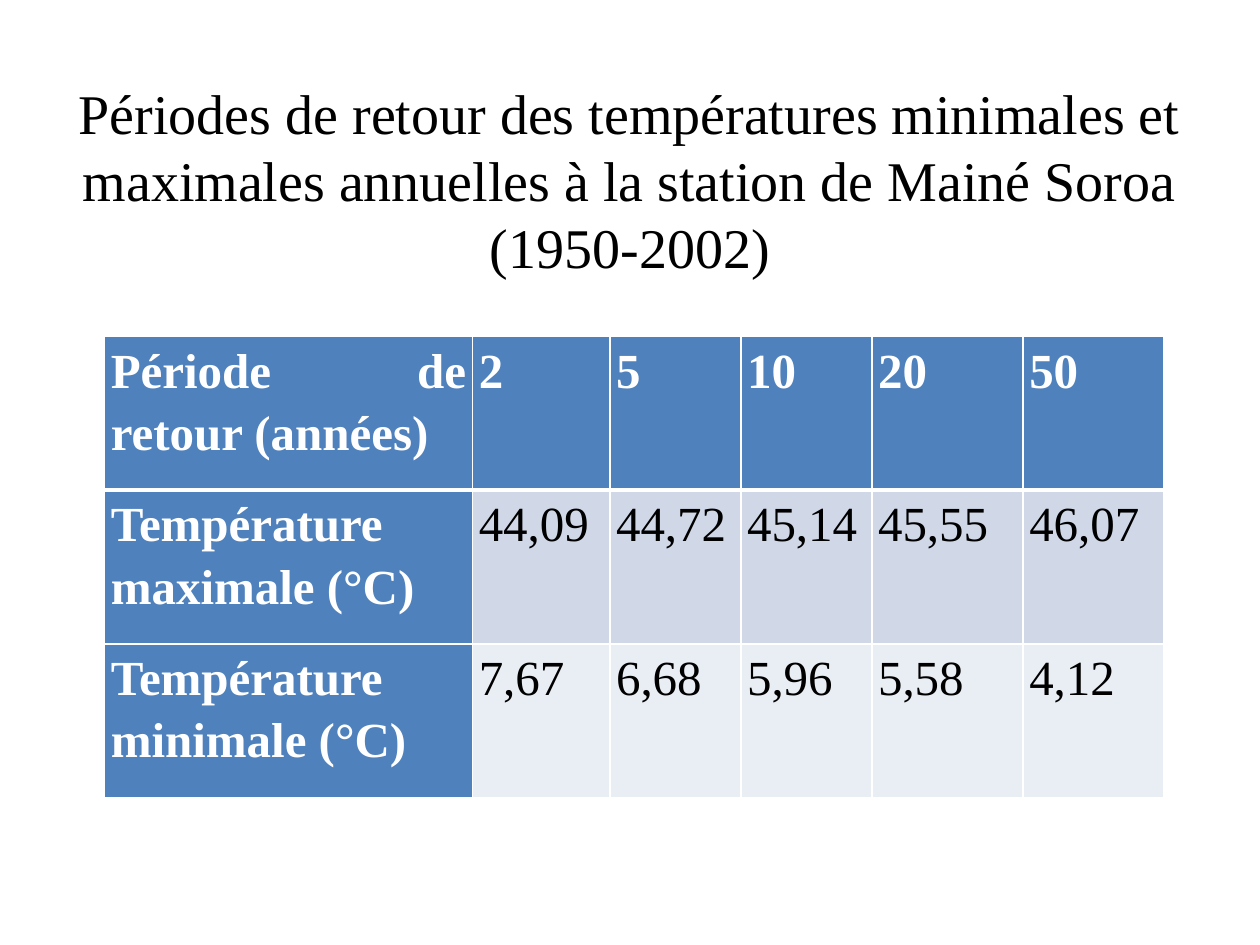
from dataclasses import dataclass

from lxml import etree
from pptx import Presentation
from pptx import util as u
from pptx.dml.color import RGBColor
from pptx.enum import text
from pptx.oxml.ns import qn


@dataclass(frozen=True)
class Theme:
    font: str = "Times New Roman"
    dark: str = "000000"
    light: str = "FFFFFF"
    head: str = "4F81BD"
    bands: tuple = ("D0D8E8", "E9EDF4")
    title: int = 32
    body: int = 28
    thin: int = 1
    thick: int = 3


class Deck:
    def __init__(self, theme):
        self.theme = theme
        self.prs = Presentation()
        self.prs.slide_width = u.Inches(10)
        self.prs.slide_height = u.Inches(7.5)
        self.slide = self.prs.slides.add_slide(self.prs.slide_layouts[5])

    def style(self, para, size, color, bold=False):
        for run in para.runs:
            font = run.font
            font.name = self.theme.font
            font.size = u.Pt(size)
            font.bold = bold
            font.color.rgb = RGBColor.from_string(color)

    def title(self, words, left, top, width, height):
        box = self.slide.shapes.title
        box.left, box.top = u.Inches(left), u.Inches(top)
        box.width, box.height = u.Inches(width), u.Inches(height)
        frame = box.text_frame
        frame.text = words
        frame.word_wrap = True
        frame.auto_size = text.MSO_AUTO_SIZE.NONE
        frame.vertical_anchor = text.MSO_ANCHOR.MIDDLE
        para = frame.paragraphs[0]
        para.alignment = text.PP_ALIGN.CENTER
        self.style(para, self.theme.title, self.theme.dark)

    def border(self, cell, side, width):
        props = cell._tc.get_or_add_tcPr()
        line = etree.SubElement(props, qn(f"a:ln{side}"), w=str(u.Pt(width)))
        fill = etree.SubElement(line, qn("a:solidFill"))
        etree.SubElement(fill, qn("a:srgbClr"), val=self.theme.light)

    def cell(self, cell, words, row, col):
        theme = self.theme
        label = row == 0 or col == 0
        cell.margin_left = cell.margin_right = u.Inches(0.05)
        cell.margin_top = cell.margin_bottom = 0
        for side in "LRTB":
            rule = (row, side) in ((0, "B"), (1, "T"))
            self.border(cell, side, theme.thick if rule else theme.thin)
        fill = theme.head if label else theme.bands[(row - 1) % 2]
        cell.fill.solid()
        cell.fill.fore_color.rgb = RGBColor.from_string(fill)
        cell.text_frame.text = words
        para = cell.text_frame.paragraphs[0]
        para.line_spacing = 1.15
        para.alignment = text.PP_ALIGN.LEFT if col else text.PP_ALIGN.JUSTIFY
        self.style(para, theme.body, theme.light if label else theme.dark, label)

    def table(self, data, left, top, widths, height):
        frame = self.slide.shapes.add_table(
            len(data), len(widths), u.Inches(left), u.Inches(top),
            u.Inches(sum(widths)), u.Inches(height * len(data)))
        grid = frame.table
        grid.first_col = True
        for col, width in zip(grid.columns, widths):
            col.width = u.Inches(width)
        for r, line in enumerate(data):
            grid.rows[r].height = u.Inches(height)
            for c, words in enumerate(line):
                self.cell(grid.cell(r, c), words, r, c)


def main():
    deck = Deck(Theme())
    deck.title(
        "Périodes de retour des températures minimales et maximales "
        "annuelles à la station de Mainé Soroa (1950-2002)",
        0.5, 0.67, 9, 1.5)
    data = [
        ["Période de retour (années)", "2", "5", "10", "20", "50"],
        ["Température maximale (°C)", "44,09", "44,72", "45,14", "45,55", "46,07"],
        ["Température minimale (°C)", "7,67", "6,68", "5,96", "5,58", "4,12"],
    ]
    deck.table(data, 0.83, 2.67, [2.92, 1.09, 1.04, 1.04, 1.2, 1.12], 1.22)
    deck.prs.save("out.pptx")


if __name__ == "__main__":
    main()
